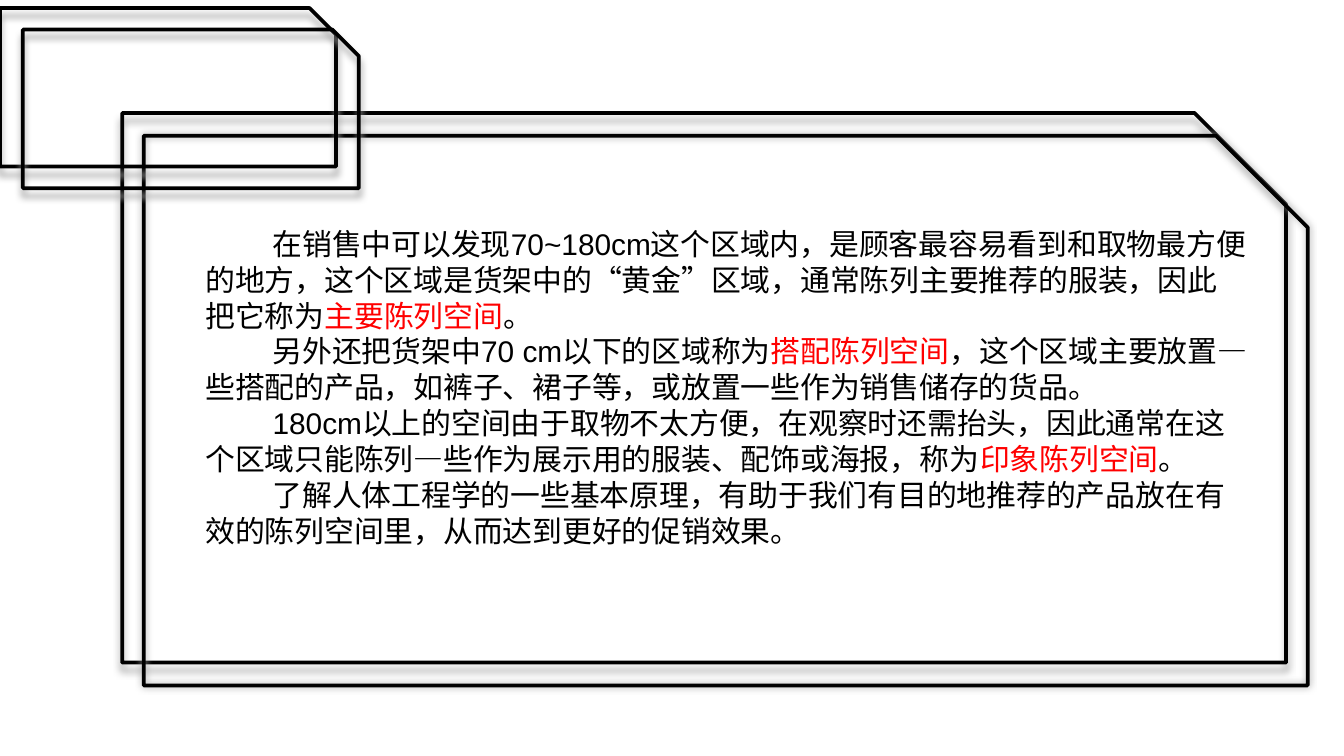
import pptx
import pptx.util
import pptx.dml.color
import pptx.enum.shapes
import pptx.enum.text
import pptx.oxml.ns
import lxml.etree

Inches = pptx.util.Inches
Pt = pptx.util.Pt
qn = pptx.oxml.ns.qn

COLORS = {"text": "000000", "accent": "FF0000", "line": "000000", "shadow": "A6A6A6"}

# Each paragraph: text before the key term, the key term, text after it
PARAGRAPHS = [
    ("在销售中可以发现70~180cm这个区域内，是顾客最容易看到和取物最方便的地方，"
     "这个区域是货架中的“黄金”区域，通常陈列主要推荐的服装，因此把它称为",
     "主要陈列空间", "。"),
    ("另外还把货架中70 cm以下的区域称为", "搭配陈列空间",
     "，这个区域主要放置—些搭配的产品，如裤子、裙子等，或放置一些作为销售储存的货品。"),
    ("180cm以上的空间由于取物不太方便，在观察时还需抬头，因此通常在这个区域只能陈列"
     "—些作为展示用的服装、配饰或海报，称为", "印象陈列空间", "。"),
    ("了解人体工程学的一些基本原理，有助于我们有目的地推荐的产品放在有效的陈列空间里，"
     "从而达到更好的促销效果。", "", ""),
]

DROP_SHADOW = {"dist": str(Pt(4)), "dir": str(90 * 60000)}
CENTRED_SHADOW = {}

# Frames: left, top, width, height, shadow offset
FRAMES = [
    (0.91, 0.84, 8.66, 4.09, DROP_SHADOW),
    (1.07, 1.01, 8.66, 4.09, CENTRED_SHADOW),
    (0, 0.06, 2.5, 1.18, DROP_SHADOW),
    (0.17, 0.22, 2.5, 1.18, DROP_SHADOW),
]


def rgb(name):
    return pptx.dml.color.RGBColor.from_string(COLORS[name])


def add_shadow(shape, offset):
    shape.shadow.inherit = False
    effects = shape._element.spPr.find(qn("a:effectLst"))
    shadow = lxml.etree.SubElement(
        effects, qn("a:outerShdw"), blurRad=str(Pt(4)), rotWithShape="0", **offset)
    lxml.etree.SubElement(shadow, qn("a:srgbClr"), val=COLORS["shadow"])


presentation = pptx.Presentation()
presentation.slide_width = Inches(10)
presentation.slide_height = Inches(10) * 9 // 16
slide = presentation.slides.add_slide(presentation.slide_layouts[6])

body = slide.shapes.add_textbox(Inches(1.43), Inches(1.63), Inches(7.95), Inches(2.52))
frame_format = {"word_wrap": True, "auto_size": pptx.enum.text.MSO_AUTO_SIZE.SHAPE_TO_FIT_TEXT}
for name, value in frame_format.items():
    setattr(body.text_frame, name, value)

for index, parts in enumerate(PARAGRAPHS):
    paragraph = body.text_frame.paragraphs[0] if index == 0 else body.text_frame.add_paragraph()
    properties = paragraph._p.get_or_add_pPr()
    properties.set("marL", "0")
    properties.set("indent", str(Inches(0.5)))
    for text, color in zip(parts, ("text", "accent", "text")):
        if text:
            run = paragraph.add_run()
            run.text = text
            for name, value in {"size": Pt(16), "name": "Arial"}.items():
                setattr(run.font, name, value)
            run.font.color.rgb = rgb(color)

for left, top, width, height, offset in FRAMES:
    frame = slide.shapes.add_shape(
        pptx.enum.shapes.MSO_SHAPE.SNIP_1_RECTANGLE,
        Inches(left), Inches(top), Inches(width), Inches(height))
    frame.fill.background()
    frame.line.color.rgb = rgb("line")
    frame.line.width = Pt(2)
    add_shadow(frame, offset)

presentation.save("out.pptx")
